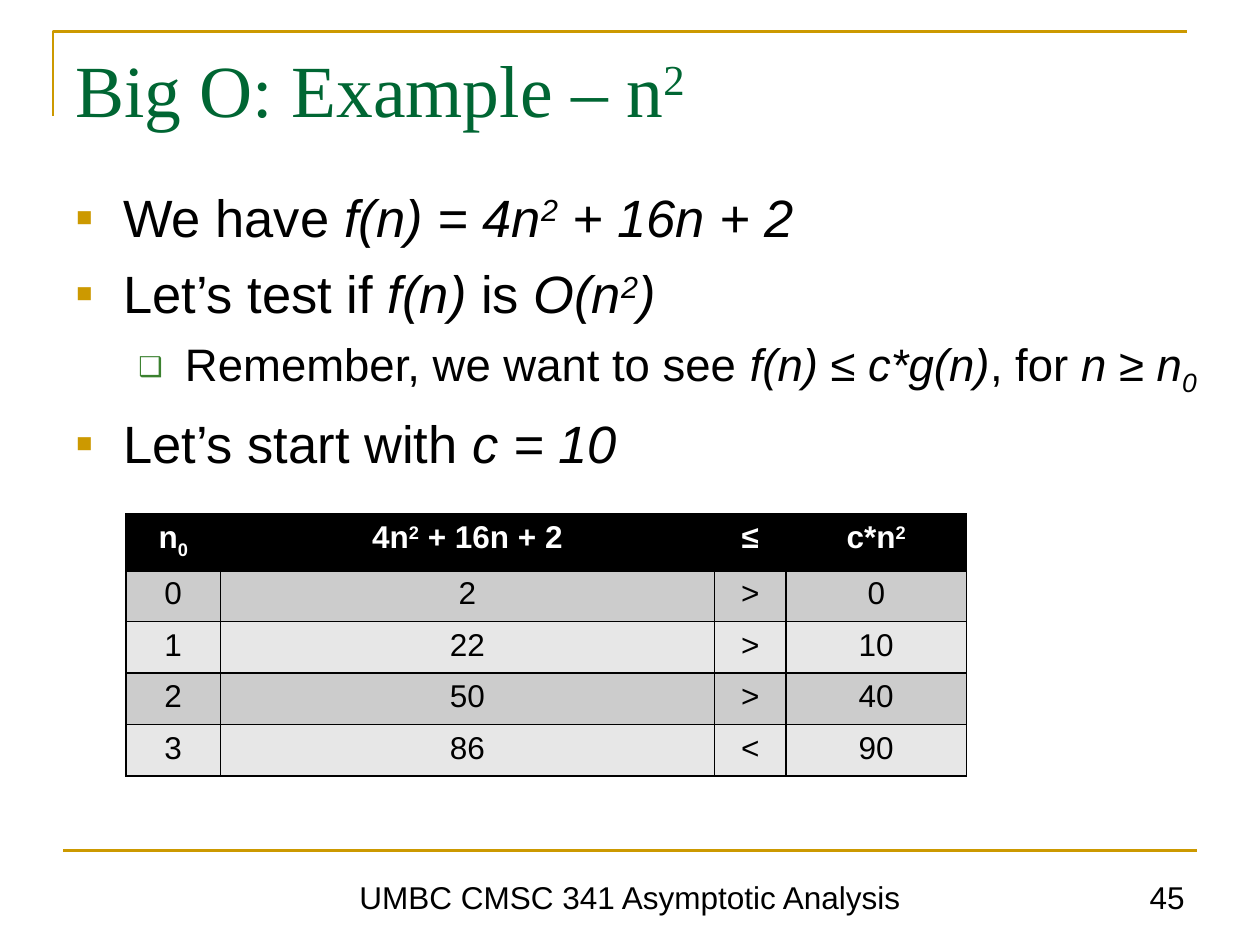
"""Build the Big O example slide."""
from lxml.etree import SubElement
from pptx import Presentation
from pptx.dml.color import RGBColor
from pptx.enum.shapes import MSO_CONNECTOR
from pptx.enum.text import MSO_ANCHOR, PP_ALIGN
from pptx.oxml.ns import qn
from pptx.util import Inches, Pt

GOLD = RGBColor(0xCC, 0x99, 0x00)
GREEN = RGBColor(0x00, 0x66, 0x33)
LEAF = RGBColor(0x3B, 0x81, 0x2F)
BLACK = RGBColor(0, 0, 0)
WHITE = RGBColor(255, 255, 255)
BANDS = RGBColor(0xE7, 0xE7, 0xE7), RGBColor(0xCC, 0xCC, 0xCC)
SHIFT = {"^": "30000", "_": "-25000"}

PLAIN = {"name": "Arial", "size": Pt(18), "color": BLACK}
HEAD = {**PLAIN, "color": WHITE, "bold": True}
TITLE = {"name": "Times New Roman", "size": Pt(42), "color": GREEN}
LEVELS = [
    {"font": {**PLAIN, "size": Pt(30)}, "left": 0.38, "hang": 0.38,
     "before": 7.5, "mark": "▪", "color": GOLD, "scale": None},
    {"font": {**PLAIN, "size": Pt(26)}, "left": 0.87, "hang": 0.37,
     "before": 6.5, "mark": "❑", "color": LEAF, "scale": "60000"},
]

POINTS = [
    (0, [("We have ", ""), ("f(n) = 4n", "i"), ("2", "i^"), (" + 16n + 2", "i")]),
    (0, [("Let’s test if ", ""), ("f(n)", "i"), (" is ", ""), ("O(n", "i"),
         ("2", "i^"), (")", "i")]),
    (1, [("Remember, we want to see ", ""), ("f(n) ≤ c*g(n)", "i"),
         (", for ", ""), ("n ≥ n", "i"), ("0", "i_")]),
    (0, [("Let’s start with ", ""), ("c = 10", "i")]),
]
COLS = [0.75, 3.92, 0.57, 1.43]
ROW = 0.41
HEADS = [
    [("n", ""), ("0", "_")],
    [("4n", ""), ("2", "^"), (" + 16n + 2", "")],
    [("≤", "")],
    [("c*n", ""), ("2", "^")],
]
DATA = [(0, 2, ">", 0), (1, 22, ">", 10), (2, 50, ">", 40), (3, 86, "<", 90)]
FOOT = [
    ("UMBC CMSC 341 Asymptotic Analysis", 1.75, 6.5, PP_ALIGN.CENTER),
    ("45", 7.17, 2.33, PP_ALIGN.RIGHT),
]


def write(para, parts, style, align=PP_ALIGN.LEFT):
    para.alignment = align
    for text, marks in parts:
        run = para.add_run()
        run.text = text
        for key, value in style.items():
            if key == "color":
                run.font.color.rgb = value
            else:
                setattr(run.font, key, value)
        run.font.italic = "i" in marks
        for mark in marks:
            if mark in SHIFT:
                run.font._element.set("baseline", SHIFT[mark])


def add_box(slide, left, top, width, height, anchor=MSO_ANCHOR.TOP):
    box = slide.shapes.add_textbox(*map(Inches, (left, top, width, height)))
    frame = box.text_frame
    frame.word_wrap = True
    frame.vertical_anchor = anchor
    return frame


def add_mark(para, level):
    props = para._p.get_or_add_pPr()
    props.set("marL", str(Inches(level["left"])))
    props.set("indent", str(-Inches(level["hang"])))
    para.space_before = Pt(level["before"])
    tint = SubElement(props, qn("a:buClr"))
    SubElement(tint, qn("a:srgbClr"), val=str(level["color"]))
    if level["scale"]:
        SubElement(props, qn("a:buSzPct"), val=level["scale"])
    SubElement(props, qn("a:buFont"), typeface="Arial")
    SubElement(props, qn("a:buChar"), char=level["mark"])


def add_edges(cell, base):
    props = cell._tc.get_or_add_tcPr()
    widths = {"lnL": 1, "lnR": 1, "lnT": 1, "lnB": base}
    for spot, (tag, width) in enumerate(widths.items()):
        line = props.makeelement(qn("a:" + tag), {"w": str(Pt(width))})
        fill = SubElement(line, qn("a:solidFill"))
        SubElement(fill, qn("a:srgbClr"), val=str(BLACK))
        props.insert(spot, line)


def add_rules(slide):
    pen = slide.shapes.build_freeform(Inches(0.42), Inches(0.92))
    pen.add_line_segments(
        [(Inches(0.42), Inches(0.25)), (Inches(9.42), Inches(0.25))], close=False)
    frame = pen.convert_to_shape()
    frame.shadow.inherit = False
    frame.fill.background()
    rule = slide.shapes.add_connector(
        MSO_CONNECTOR.STRAIGHT, *map(Inches, (0.5, 6.75, 9.5, 6.75)))
    SubElement(rule._element.spPr, qn("a:ln"))
    for shape in (frame, rule):
        shape.line.color.rgb = GOLD
        shape.line.width = Pt(1.5)
    SubElement(rule._element.spPr, qn("a:effectLst"))


def add_grid(slide):
    rows = [HEADS] + [[[(str(item), "")] for item in row] for row in DATA]
    size = (1, 4.08, sum(COLS), ROW * len(rows))
    grid = slide.shapes.add_table(len(rows), len(COLS), *map(Inches, size)).table
    for col, width in zip(grid.columns, COLS):
        col.width = Inches(width)
    for r, row in enumerate(rows):
        grid.rows[r].height = Inches(ROW)
        for c, parts in enumerate(row):
            cell = grid.cell(r, c)
            cell.fill.solid()
            cell.fill.fore_color.rgb = BANDS[r % 2] if r else BLACK
            style = PLAIN if r else HEAD
            write(cell.text_frame.paragraphs[0], parts,
                  {"bold": False, **style}, PP_ALIGN.CENTER)
            add_edges(cell, 1 if r else 3)


def main():
    deck = Presentation()
    deck.slide_width, deck.slide_height = Inches(10), Inches(7.5)
    slide = deck.slides.add_slide(deck.slide_layouts[6])
    add_rules(slide)
    title = add_box(slide, 0.5, 0.3, 8.99, 1.11)
    write(title.paragraphs[0], [("Big O: Example – n", ""), ("2", "^")], TITLE)
    body = add_box(slide, 0.5, 1.42, 9.33, 5.28)
    for i, (depth, parts) in enumerate(POINTS):
        para = body.add_paragraph() if i else body.paragraphs[0]
        para.level = depth
        add_mark(para, LEVELS[depth])
        write(para, parts, LEVELS[depth]["font"])
    for text, left, width, align in FOOT:
        foot = add_box(slide, left, 6.83, width, 0.49, MSO_ANCHOR.BOTTOM)
        write(foot.paragraphs[0], [(text, "")], PLAIN, align)
    add_grid(slide)
    deck.save("out.pptx")


if __name__ == "__main__":
    main()
